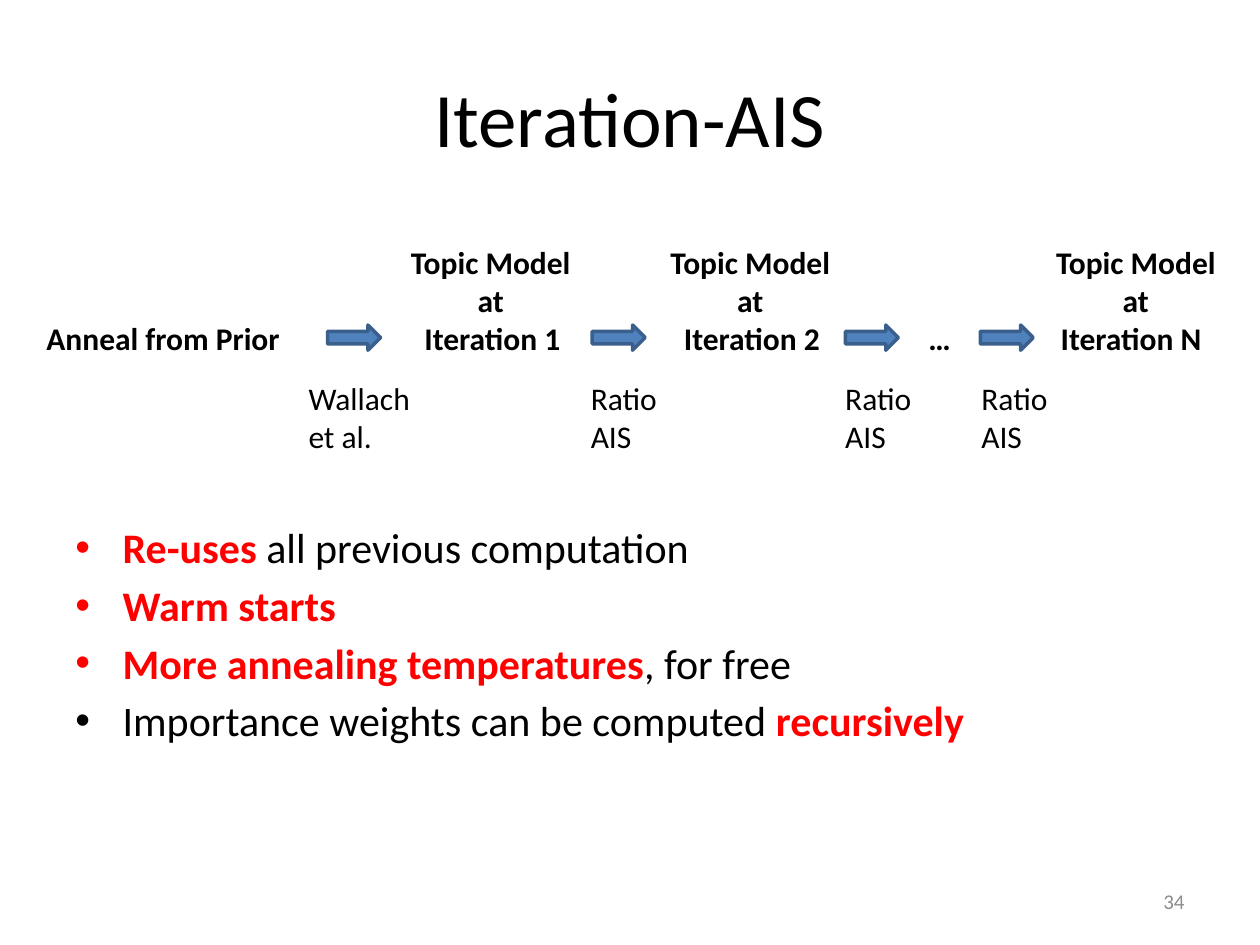
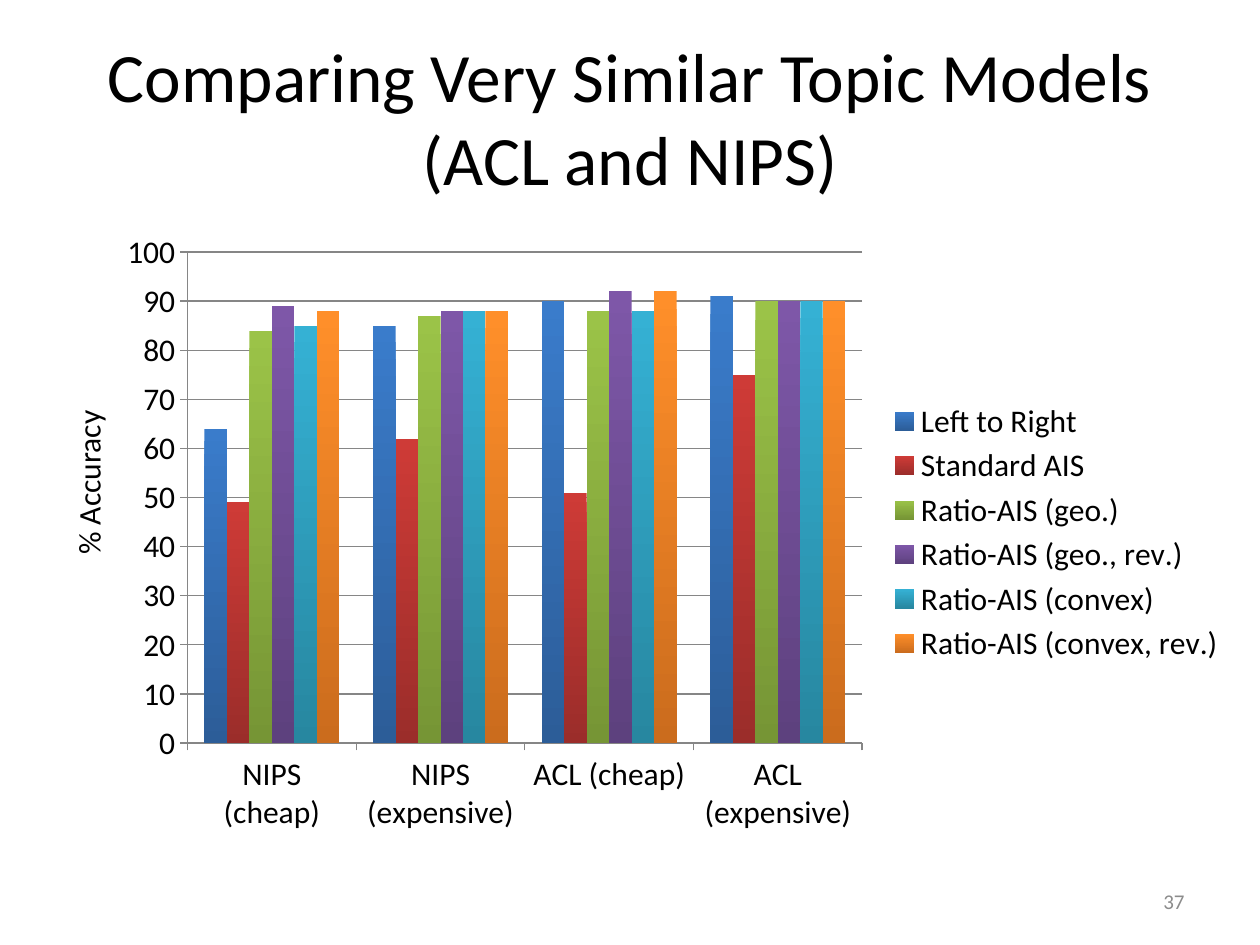
import pptx
import pptx.chart.data
import pptx.dml.color
import pptx.enum.chart
import pptx.enum.shapes
import pptx.enum.text
import pptx.oxml
import pptx.oxml.ns
import pptx.util
from lxml import etree

COLORS = {
    "text": "000000",
    "accent": "FF0000",
    "footer": "8C8C8C",
    "arrow": "4F81BD",
    "arrow_edge": "3A5F8C",
    "axis": "868686",
}
FONT = "Calibri"
BODY_SIZE = 18
ALIGN = pptx.enum.text.PP_ALIGN
ANCHOR = pptx.enum.text.MSO_ANCHOR
rgb = pptx.dml.color.RGBColor.from_string

deck = pptx.Presentation()
deck.slide_width = pptx.util.Inches(10)
deck.slide_height = pptx.util.Inches(7.5)
COLUMN = deck.slide_width / 100
ROW = deck.slide_height / 75


def area(left, top, width, height):
    """Turn columns and rows of the 100 by 75 grid into slide lengths."""
    return [round(n * unit) for n, unit in
            zip((left, top, width, height), (COLUMN, ROW, COLUMN, ROW))]


def add_text(slide, place, paragraphs, size=BODY_SIZE, align=ALIGN.LEFT, anchor=ANCHOR.TOP):
    """Each paragraph is a list of runs: (text, colour name, bold)."""
    box = slide.shapes.add_textbox(*area(*place))
    frame = box.text_frame
    frame.word_wrap = True
    frame.vertical_anchor = anchor
    for number, runs in enumerate(paragraphs):
        paragraph = frame.add_paragraph() if number else frame.paragraphs[0]
        paragraph.alignment = align
        for words, color, bold in runs:
            run = paragraph.add_run()
            run.text = words
            run.font.name = FONT
            run.font.size = pptx.util.Pt(size)
            run.font.bold = bold
            run.font.color.rgb = rgb(COLORS[color])
    return box


# Both slides: title and slide number
pages = []
for title, title_size, page_number in [
    ("Iteration-AIS", 44, "34"),
    ("Comparing Very Similar Topic Models (ACL and NIPS)", 39.6, "37"),
]:
    slide = deck.slides.add_slide(deck.slide_layouts[6])
    add_text(slide, (5, 3, 90, 12.5), [[(title, "text", False)]],
             title_size, ALIGN.CENTER, ANCHOR.MIDDLE)
    add_text(slide, (71.7, 69.5, 23.3, 4), [[(page_number, "footer", False)]],
             12, ALIGN.RIGHT, ANCHOR.MIDDLE)
    pages.append(slide)
iteration_slide, accuracy_slide = pages

# Slide 1: benefits
benefits = add_text(iteration_slide, (5, 17.5, 90, 49.5), [
    [("Re-uses", "accent", True), (" all previous computation", "text", False)],
    [("Warm starts", "accent", True)],
    [("More annealing temperatures", "accent", True), (", for free", "text", False)],
    [("Importance weights can be computed ", "text", False), ("recursively", "accent", True)],
], 24)
benefits.text_frame.margin_top = round(23.9 * ROW)
hanging = round(3.75 * COLUMN)
for number, benefit in enumerate(benefits.text_frame.paragraphs):
    benefit.space_before = pptx.util.Pt(4.2 if number else 0)
    properties = benefit._p.get_or_add_pPr()
    properties.set("marL", str(hanging))
    properties.set("indent", str(-hanging))
    bullet_font = etree.SubElement(properties, pptx.oxml.ns.qn("a:buFont"))
    bullet_font.set("typeface", "Arial")
    etree.SubElement(properties, pptx.oxml.ns.qn("a:buChar")).set("char", "•")

# Slide 1: chain of models, one tab stop per stage
stages = ["Anneal from Prior", "Iteration 1", "Iteration 2", "…", "Iteration N"]
chain = add_text(iteration_slide, (2.7, 24.8, 95.8, 4), [[("\t".join(stages), "text", True)]])
tab_stops = etree.SubElement(chain.text_frame.paragraphs[0]._p.get_or_add_pPr(),
                             pptx.oxml.ns.qn("a:tabLst"))
for stop in (30, 50.6, 70, 80.5):
    tab = etree.SubElement(tab_stops, pptx.oxml.ns.qn("a:tab"))
    tab.set("pos", str(round(stop * COLUMN)))
    tab.set("algn", "l")

for arrow_left, method_left, method_width, method in [
    (26, 23.5, 10.8, "Wallach et al."),
    (47, 45.9, 7.5, "Ratio AIS"),
    (67.1, 66.1, 7.5, "Ratio AIS"),
    (77.8, 76.9, 7.5, "Ratio AIS"),
]:
    arrow = iteration_slide.shapes.add_shape(
        pptx.enum.shapes.MSO_SHAPE.RIGHT_ARROW, *area(arrow_left, 25.8, 4.2, 2))
    arrow.shadow.inherit = False
    arrow.fill.solid()
    arrow.fill.fore_color.rgb = rgb(COLORS["arrow"])
    arrow.line.color.rgb = rgb(COLORS["arrow_edge"])
    arrow.line.width = pptx.util.Pt(2)
    add_text(iteration_slide, (method_left, 29.6, method_width, 7.1), [[(method, "text", False)]])

for model_left in (30.6, 51.2, 81.8):
    add_text(iteration_slide, (model_left, 18.8, 16.7, 7.1),
             [[("Topic Model at", "text", True)]], align=ALIGN.CENTER)

# Slide 2: accuracy by method, with the top and bottom colour of its bars
methods = [
    ("Left to Right", (64, 85, 90, 91), "3A7CCB", "2C5D98"),
    ("Standard AIS", (49, 62, 51, 75), "CE3B37", "9B2D2A"),
    ("Ratio-AIS (geo.)", (84, 87, 88, 90), "9BC348", "769535"),
    ("Ratio-AIS (geo., rev.)", (89, 88, 92, 90), "7E57A8", "5D417E"),
    ("Ratio-AIS (convex)", (85, 88, 88, 90), "35B1D4", "2787A0"),
    ("Ratio-AIS (convex, rev.)", (88, 88, 92, 90), "FF8F2A", "CB6C1D"),
]
accuracy = pptx.chart.data.CategoryChartData()
accuracy.categories = ["NIPS (cheap)", "NIPS (expensive)", "ACL (cheap)", "ACL (expensive)"]
for method, scores, _, _ in methods:
    accuracy.add_series(method, scores)
chart = accuracy_slide.shapes.add_chart(
    pptx.enum.chart.XL_CHART_TYPE.COLUMN_CLUSTERED, *area(8.3, 17.5, 90, 49.5), accuracy).chart
chart.has_title = False
chart.font.name = FONT
chart.font.size = pptx.util.Pt(BODY_SIZE)
chart.font.color.rgb = rgb(COLORS["text"])
chart.has_legend = True
chart.legend.position = pptx.enum.chart.XL_LEGEND_POSITION.RIGHT
chart.legend.include_in_layout = False

bars = chart.plots[0]
bars.gap_width = 150
bars.overlap = 0
bars.vary_by_categories = False
for series, (_, _, top_color, bottom_color) in zip(bars.series, methods):
    fill = series.format.fill
    fill.gradient()
    fill.gradient_angle = 270
    for stop, color in zip(fill.gradient_stops, (top_color, bottom_color)):
        stop.color.rgb = rgb(color)

chart.value_axis.minimum_scale = 0
chart.value_axis.maximum_scale = 100
chart.value_axis.major_unit = 10
chart.value_axis.has_major_gridlines = True
for axis in (chart.category_axis, chart.value_axis):
    axis.major_tick_mark = pptx.enum.chart.XL_TICK_MARK.OUTSIDE
for line in (chart.category_axis.format.line, chart.value_axis.format.line,
             chart.value_axis.major_gridlines.format.line):
    line.color.rgb = rgb(COLORS["axis"])
    line.width = pptx.util.Pt(0.75)

axis_label = add_text(accuracy_slide, (-0.1, 35.9, 14.2, 4), [[("% Accuracy", "text", False)]])
axis_label.rotation = 270

deck.save("out.pptx")
